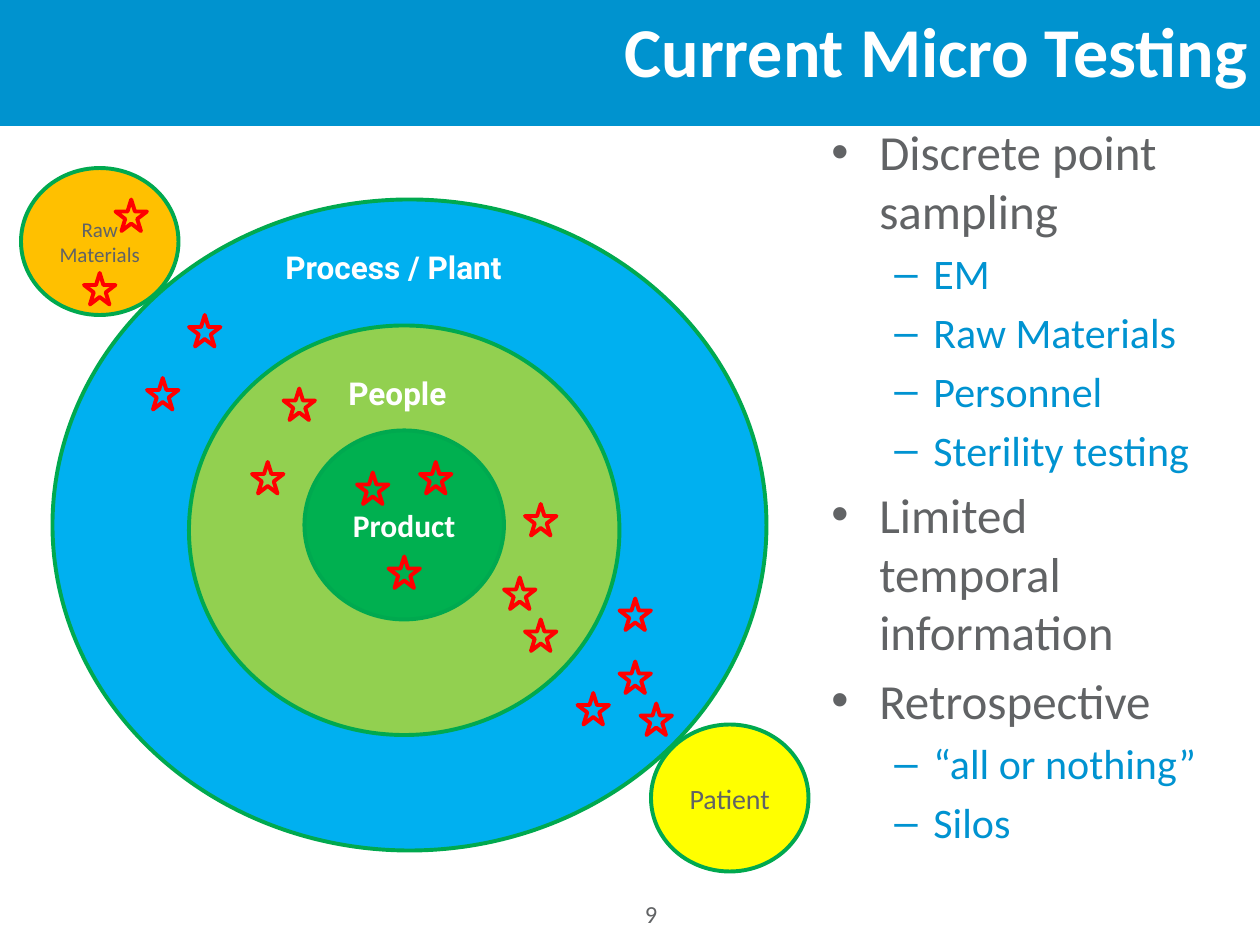
from lxml import etree
from pptx import Presentation
from pptx import util as u
from pptx.dml.color import RGBColor
from pptx.enum import shapes, text
from pptx.oxml.ns import qn


class Theme:
    font, label = "Calibri", "Roboto"
    blue, green, red = "0093CF", "00A94F", "FF0000"
    white, gray, sub = "FFFFFF", "616365", "0093D1"
    plant, people, product = "00B0F0", "92D050", "00B050"
    raw, patient = "FFC000", "FFFF00"
    title, head, item, name, note, small, page = 40, 28, 24, 18, 16, 12, 14
    line = 2.25


# All places are in cells of a grid of 120 columns and 90 rows.
COLS, ROWS = 120, 90
WIDE, HIGH = u.Inches(10), u.Inches(7.5)

# Banner edges in inches: colour, left start, two curve handles, right end
BANDS = [
    (Theme.green, (0, 0.86), (3.79, 0.55), (9.49, 1.24), (10, 0.74)),
    (Theme.blue, (0, 0.78), (3.04, 0.63), (9.51, 1.1), (10, 0.67)),
]
# Box, fill, lines of text, size, colour, bold
RINGS = [
    ((5, 19, 68, 62), Theme.plant, [], Theme.name, Theme.white, True),
    ((18, 31, 41, 39), Theme.people, [], Theme.name, Theme.white, True),
    ((29, 41, 19, 18), Theme.product, ["Product"], Theme.name, Theme.white, True),
    ((2, 16, 15, 14), Theme.raw, ["Raw", "Materials"], Theme.small, Theme.gray, False),
    ((62, 69, 15, 14), Theme.patient, ["Patient"], Theme.note, Theme.gray, False),
]
LABELS = [("People", (32, 35, 13, 5)), ("Process / Plant", (26, 23, 26, 5))]
STAR = 3
STARS = [
    (18, 30), (55, 66), (59, 63), (59, 57), (61, 67), (37, 53), (50, 59), (24, 44),
    (48, 55), (50, 48), (40, 44), (34, 45), (27, 37), (14, 36), (11, 19), (8, 26),
]
POINTS = [
    ("Discrete point sampling", ["EM", "Raw Materials", "Personnel", "Sterility testing"]),
    ("Limited temporal information", []),
    ("Retrospective", ["“all or nothing”", "Silos"]),
]
# Bullet, left margin and hanging indent in inches, size, colour
LEVELS = [
    ("•", 0.38, 0.38, Theme.head, Theme.gray),
    ("–", 0.81, 0.31, Theme.item, Theme.sub),
]


def rgb(code):
    return RGBColor.from_string(code)


def cells(left, top, wide, high):
    """Turn grid cells into slide lengths."""
    return (round(left * WIDE / COLS), round(top * HIGH / ROWS),
            round(wide * WIDE / COLS), round(high * HIGH / ROWS))


def write(para, words, size, color, bold=False, font=Theme.font):
    run = para.add_run()
    run.text = words
    run.font.name, run.font.size, run.font.bold = font, u.Pt(size), bold
    run.font.color.rgb = rgb(color)


def add_box(slide, box):
    frame = slide.shapes.add_textbox(*cells(*box)).text_frame
    frame.word_wrap = True
    return frame


def add_form(slide, kind, box, line, fill=None):
    form = slide.shapes.add_shape(kind, *cells(*box))
    form.shadow.inherit = False
    if fill:
        form.fill.solid()
        form.fill.fore_color.rgb = rgb(fill)
    else:
        form.fill.background()
    form.line.color.rgb = rgb(line)
    form.line.width = u.Pt(Theme.line)
    return form


def add_band(slide, color, *curve, steps=60):
    """Fill the area from the slide's top down to a cubic curve."""
    edge = []
    for step in range(steps + 1):
        t = step / steps
        parts = ((1 - t) ** 3, 3 * t * (1 - t) ** 2, 3 * t * t * (1 - t), t ** 3)
        edge.append(tuple(sum(p * c[axis] for p, c in zip(parts, curve)) for axis in (0, 1)))
    pen = slide.shapes.build_freeform(0, 0, scale=u.Inches(1))
    pen.add_line_segments(edge + [(10, 0)], close=True)
    band = pen.convert_to_shape()
    band.shadow.inherit = False
    band.fill.solid()
    band.fill.fore_color.rgb = rgb(color)
    band.line.fill.background()


def add_ring(slide, box, fill, lines, size, color, bold):
    ring = add_form(slide, shapes.MSO_SHAPE.OVAL, box, Theme.green, fill)
    frame = ring.text_frame
    frame.vertical_anchor = text.MSO_ANCHOR.MIDDLE
    for i, words in enumerate(lines):
        para = frame.add_paragraph() if i else frame.paragraphs[0]
        para.alignment = text.PP_ALIGN.CENTER
        write(para, words, size, color, bold)


def add_list(slide, box):
    frame = add_box(slide, box)
    rows = [row for head, subs in POINTS
            for row in [(head, 0)] + [(sub, 1) for sub in subs]]
    for i, (words, level) in enumerate(rows):
        mark, left, hang, size, color = LEVELS[level]
        para = frame.add_paragraph() if i else frame.paragraphs[0]
        para.level = level
        props = para._p.get_or_add_pPr()
        props.set("marL", str(u.Inches(left)))
        props.set("indent", str(-u.Inches(hang)))
        etree.SubElement(props, qn("a:buFont")).set("typeface", "Arial")
        etree.SubElement(props, qn("a:buChar")).set("char", mark)
        if i:
            para.space_before = u.Pt(size * 0.2)
        write(para, words, size, color)


def main():
    deck = Presentation()
    deck.slide_width, deck.slide_height = WIDE, HIGH
    slide = deck.slides.add_slide(deck.slide_layouts[6])

    page = add_box(slide, (51, 85, 22, 5)).paragraphs[0]
    page.alignment = text.PP_ALIGN.CENTER
    write(page, "9", Theme.page, Theme.gray)

    for band in BANDS:
        add_band(slide, *band)
    title = add_box(slide, (13, 0, 107, 9.4))
    title.margin_top = title.margin_bottom = 0
    title.vertical_anchor = text.MSO_ANCHOR.MIDDLE
    title.paragraphs[0].alignment = text.PP_ALIGN.RIGHT
    write(title.paragraphs[0], "Current Micro Testing", Theme.title, Theme.white, True)

    add_list(slide, (78, 11, 39, 73.3))
    for ring in RINGS:
        add_ring(slide, *ring)
    for words, box in LABELS:
        para = add_box(slide, box).paragraphs[0]
        write(para, words, Theme.name, Theme.white, True, Theme.label)
    for left, top in STARS:
        add_form(slide, shapes.MSO_SHAPE.STAR_5_POINT, (left, top, STAR, STAR), Theme.red)

    deck.save("out.pptx")


if __name__ == "__main__":
    main()
